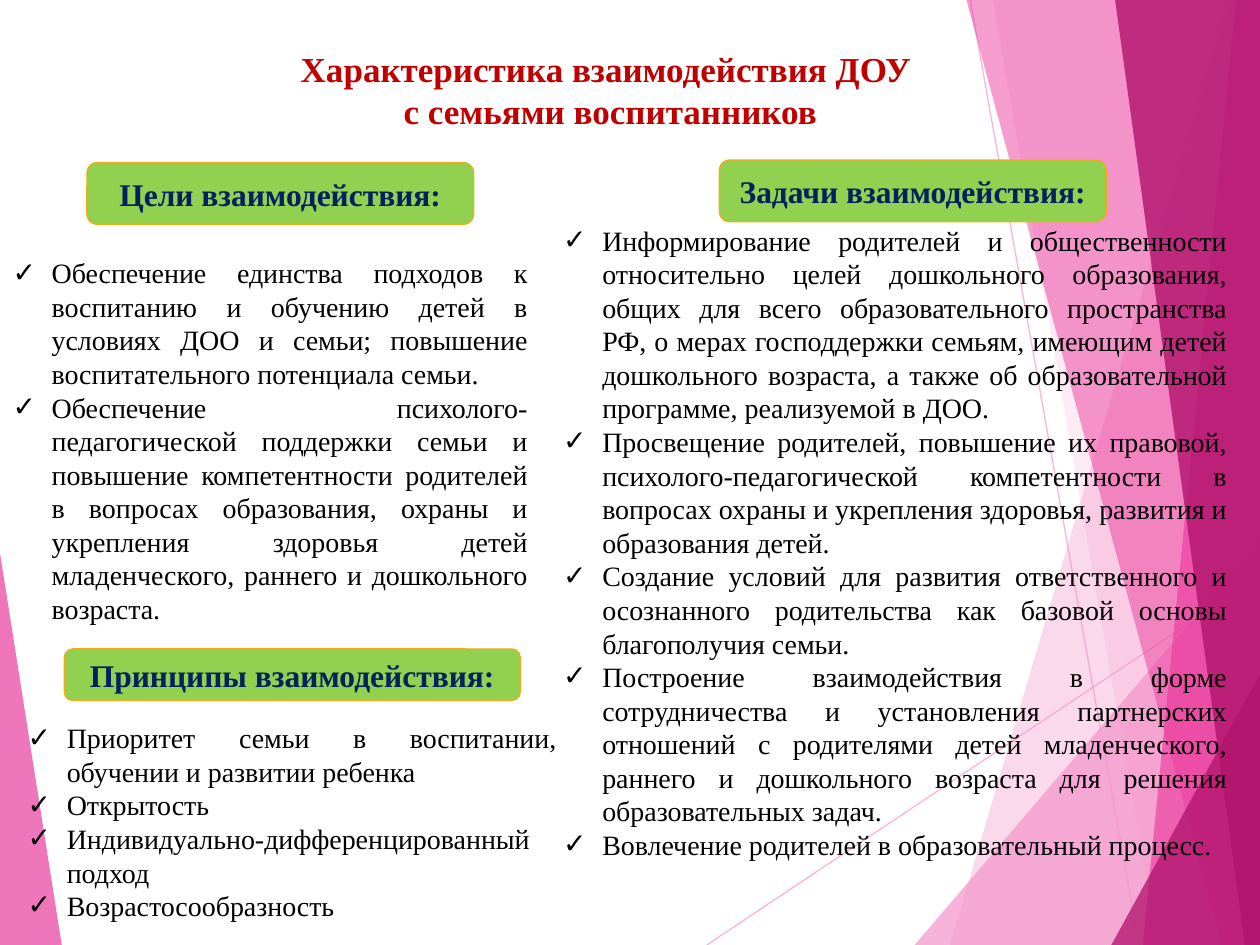
from lxml import etree
from pptx import Presentation
from pptx.dml.color import RGBColor
from pptx.enum.shapes import MSO_CONNECTOR, MSO_SHAPE
from pptx.enum.text import MSO_ANCHOR, MSO_AUTO_SIZE, PP_ALIGN
from pptx.oxml.ns import qn
from pptx.util import Inches, Pt

STRAIGHT = MSO_CONNECTOR.STRAIGHT
ROUNDED = MSO_SHAPE.ROUNDED_RECTANGLE
TOP, MIDDLE = MSO_ANCHOR.TOP, MSO_ANCHOR.MIDDLE
CENTER, JUSTIFY = PP_ALIGN.CENTER, PP_ALIGN.JUSTIFY
NO_FIT = MSO_AUTO_SIZE.NONE

THEME = {
    "font": "Times New Roman",
    "title": {"size": Pt(20), "bold": True, "color": "C00000"},
    "heading": {"size": Pt(18), "bold": True, "color": "002060"},
    "list": {"size": Pt(16), "bold": False, "color": "000000"},
    "heading_fill": "92D050",
    "heading_line": "F2AC19",
    "light": "F496CB",
    "pink": "EB3D9F",
    "dark": "B2136D",
}
COMPARISON_LAYOUT = 4
BULLET_INDENT = Inches(0.31)

# Colour, opacity in percent, corner points in inches
FACETS = [
    ("light", 36, [(9.75, 0), (7.54, 7.5), (10, 7.5), (10, 0)]),
    ("light", 20, [(7.88, 0), (9.19, 7.5), (10, 7.5), (10, 0)]),
    ("light", 72, [(7.26, 7.5), (10, 4.29), (10, 7.5)]),
    ("pink", 50, [(7.67, 0), (9.7, 7.5), (10, 7.5), (10, 0)]),
    ("pink", 66, [(9.81, 0), (9.07, 7.5), (10, 7.5), (10, 0)]),
    ("dark", 80, [(8.85, 0), (9.88, 7.5), (10, 7.5), (10, 0)]),
    ("dark", 76, [(8.82, 7.5), (10, 5.35), (10, 7.5)]),
    ("pink", 70, [(0, 4.39), (0.49, 7.5), (0, 7.5)]),
]
RAYS = [(5.61, 7.5, 10, 4.57), (7.7, 0, 9.04, 7.5)]

TITLE_BOX = (0.91, 0.33, 7.87, 0.77)
TITLE = ["Характеристика взаимодействия ДОУ ", "с семьями воспитанников"]

HEADINGS = [
    ("Цели взаимодействия:", (0.69, 1.29, 3.07, 0.49)),
    ("Задачи взаимодействия:", (5.71, 1.27, 3.07, 0.49)),
    ("Принципы взаимодействия:", (0.51, 5.15, 3.62, 0.41)),
]

# Placeholder index, box, items
LISTS = [
    (2, (0, 1.98, 4.29, 3.06), [
        "Обеспечение единства подходов к воспитанию и обучению детей в условиях "
        "ДОО и семьи; повышение воспитательного потенциала семьи.",
        "Обеспечение психолого-педагогической поддержки семьи и повышение "
        "компетентности родителей в вопросах образования, охраны и укрепления "
        "здоровья детей младенческого, раннего и дошкольного возраста.",
    ]),
    (4, (4.37, 1.72, 5.47, 5.22), [
        "Информирование родителей и общественности относительно целей "
        "дошкольного образования, общих для всего образовательного пространства "
        "РФ, о мерах господдержки семьям, имеющим детей дошкольного возраста, "
        "а также об образовательной программе, реализуемой в ДОО.",
        "Просвещение родителей, повышение их правовой, психолого-педагогической "
        "компетентности в вопросах охраны и укрепления здоровья, развития и "
        "образования детей.",
        "Создание условий для развития ответственного и осознанного родительства "
        "как базовой основы благополучия семьи.",
        "Построение взаимодействия в форме сотрудничества и установления "
        "партнерских отношений с родителями детей младенческого, раннего и "
        "дошкольного возраста для решения образовательных задач.",
        "Вовлечение родителей в образовательный процесс.",
    ]),
    (3, (0.12, 5.67, 4.4, 1.72), [
        "Приоритет семьи в воспитании, обучении и развитии ребенка",
        "Открытость",
        "Индивидуально-дифференцированный подход",
        "Возрастосообразность",
    ]),
]


def set_opacity(fill_owner, percent):
    color = next(fill_owner.iter(qn("a:srgbClr")))
    etree.SubElement(color, qn("a:alpha"), val=str(percent * 1000))


def write_text(shape, lines, style, align, anchor):
    frame = shape.text_frame
    frame_format = {"word_wrap": True, "auto_size": NO_FIT, "vertical_anchor": anchor}
    for name, value in frame_format.items():
        setattr(frame, name, value)
    frame.text = "\n".join(lines)
    spacing = {"alignment": align, "line_spacing": 1.0,
               "space_before": Pt(0), "space_after": Pt(0)}
    for paragraph in frame.paragraphs:
        for name, value in spacing.items():
            setattr(paragraph, name, value)
        font = paragraph.runs[0].font
        font.name = THEME["font"]
        font.size = style["size"]
        font.bold = style["bold"]
        font.color.rgb = RGBColor.from_string(style["color"])


presentation = Presentation()
presentation.slide_width, presentation.slide_height = Inches(10), Inches(7.5)
slide = presentation.slides.add_slide(presentation.slide_layouts[COMPARISON_LAYOUT])
shapes = slide.shapes
placeholders = {holder.placeholder_format.idx: holder for holder in slide.placeholders}
unused = placeholders.pop(1).element
unused.getparent().remove(unused)

# Background decoration
for ends in RAYS:
    ray = shapes.add_connector(STRAIGHT, *map(Inches, ends))
    ray.line.color.rgb = RGBColor.from_string(THEME["light"])
    ray.line.width = Pt(0.75)
    properties = ray.element.spPr
    set_opacity(properties, 70)
    etree.SubElement(properties, qn("a:effectLst"))

for color, opacity, corners in FACETS:
    points = [(Inches(x), Inches(y)) for x, y in corners]
    outline = shapes.build_freeform(*points[0])
    outline.add_line_segments(points[1:], close=True)
    facet = outline.convert_to_shape()
    facet.shadow.inherit = False
    facet.fill.solid()
    facet.fill.fore_color.rgb = RGBColor.from_string(THEME[color])
    set_opacity(facet.element.spPr, opacity)
    facet.line.fill.background()

# Placeholders go in front of the decoration
for holder in placeholders.values():
    holder.element.getparent().append(holder.element)

title = shapes.title
title.left, title.top, title.width, title.height = map(Inches, TITLE_BOX)
write_text(title, TITLE, THEME["title"], CENTER, TOP)

for text, box in HEADINGS:
    heading = shapes.add_shape(ROUNDED, *map(Inches, box))
    heading.shadow.inherit = False
    heading.fill.solid()
    heading.fill.fore_color.rgb = RGBColor.from_string(THEME["heading_fill"])
    heading.line.color.rgb = RGBColor.from_string(THEME["heading_line"])
    heading.line.width = Pt(0.75)
    write_text(heading, [text], THEME["heading"], CENTER, MIDDLE)

for index, box, items in LISTS:
    body = placeholders[index]
    body.left, body.top, body.width, body.height = map(Inches, box)
    write_text(body, items, THEME["list"], JUSTIFY, TOP)
    for paragraph in body.text_frame.paragraphs:
        properties = paragraph._p.get_or_add_pPr()
        properties.set("marL", str(BULLET_INDENT))
        properties.set("indent", str(-BULLET_INDENT))
        etree.SubElement(properties, qn("a:buChar"), char="✓")

presentation.save("out.pptx")
